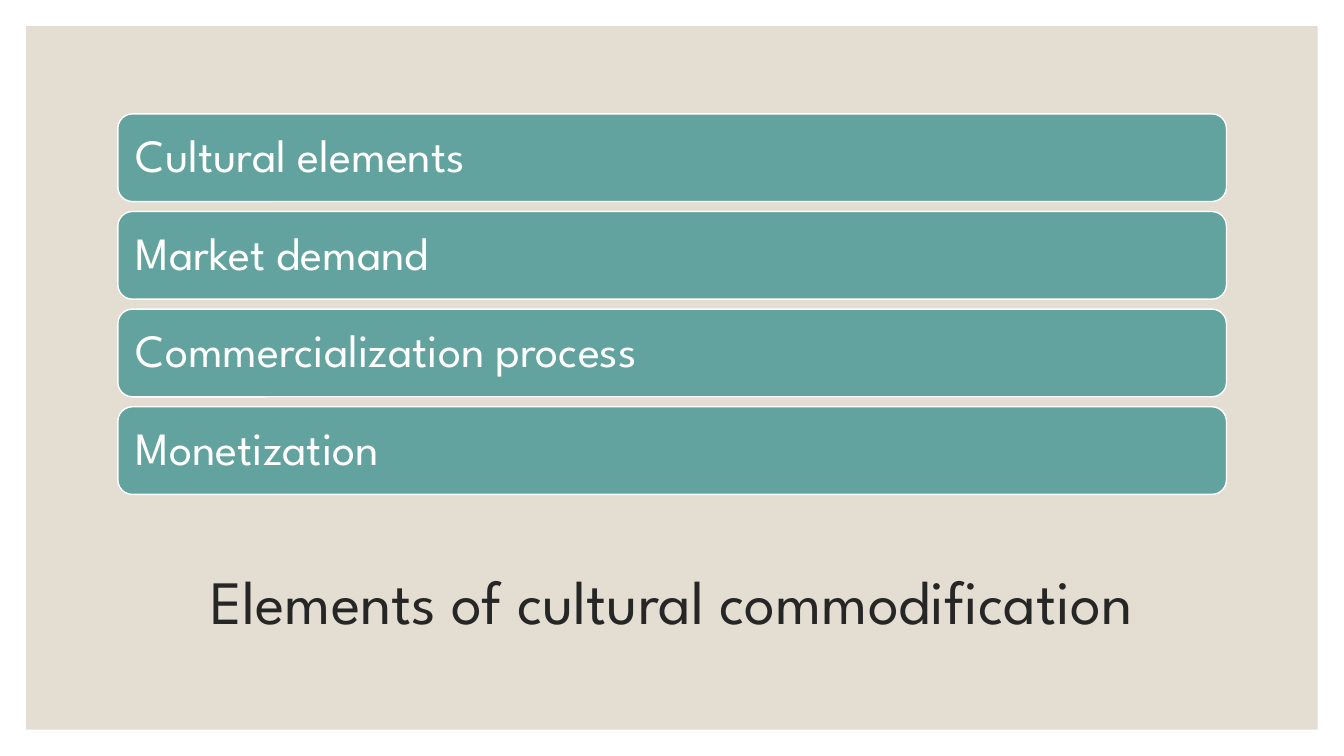
import pptx
import pptx.util
import pptx.dml.color
import pptx.enum.shapes
import pptx.enum.text

Cm, Pt = pptx.util.Cm, pptx.util.Pt
SHAPES = pptx.enum.shapes.MSO_SHAPE
ALIGN = pptx.enum.text.PP_ALIGN

heading = "Elements of cultural commodification"
elements = [
    "Cultural elements",
    "Market demand",
    "Commercialization process",
    "Monetization",
]
FONT = "League Spartan"
SLIDE_WIDTH, SLIDE_HEIGHT = 33.87, 19.05
MARGIN = 0.66
LEFT, WIDTH = 2.97, 27.94
BAR_TOP, BAR_HEIGHT, BAR_GAP = 2.87, 2.21, 0.25
HEADING_TOP, HEADING_HEIGHT = 13.34, 3.81


def color(hex_string):
    return pptx.dml.color.RGBColor.from_string(hex_string)


def add_block(slide, kind, left, top, width, height, fill):
    block = slide.shapes.add_shape(kind, Cm(left), Cm(top), Cm(width), Cm(height))
    block.shadow.inherit = False
    block.fill.solid()
    block.fill.fore_color.rgb = color(fill)
    block.line.fill.background()
    return block


def write(frame, text, size, hex_string, align):
    frame.text = text
    frame.word_wrap = True
    frame.vertical_anchor = pptx.enum.text.MSO_ANCHOR.MIDDLE
    paragraph = frame.paragraphs[0]
    paragraph.alignment = align
    paragraph.line_spacing = 0.9
    font = paragraph.runs[0].font
    font.name = FONT
    font.size = Pt(size)
    font.color.rgb = color(hex_string)


def main():
    deck = pptx.Presentation()
    deck.slide_width, deck.slide_height = Cm(SLIDE_WIDTH), Cm(SLIDE_HEIGHT)
    slide = deck.slides.add_slide(deck.slide_layouts[6])

    add_block(slide, SHAPES.RECTANGLE, MARGIN, MARGIN,
              SLIDE_WIDTH - 2 * MARGIN, SLIDE_HEIGHT - 2 * MARGIN, "E3DED1")

    title = slide.shapes.add_textbox(
        Cm(LEFT), Cm(HEADING_TOP), Cm(WIDTH), Cm(HEADING_HEIGHT))
    write(title.text_frame, heading, 44, "262626", ALIGN.CENTER)

    for index, element in enumerate(elements):
        top = BAR_TOP + index * (BAR_HEIGHT + BAR_GAP)
        bar = add_block(slide, SHAPES.ROUNDED_RECTANGLE, LEFT, top,
                        WIDTH, BAR_HEIGHT, "62A39F")
        bar.line.color.rgb = color("FFFFFF")
        bar.line.width = Pt(1)
        frame = bar.text_frame
        frame.margin_left = frame.margin_right = Cm(0.35)
        frame.margin_top = frame.margin_bottom = Cm(0.35)
        write(frame, element, 33, "FFFFFF", ALIGN.LEFT)

    deck.save("out.pptx")


if __name__ == "__main__":
    main()
